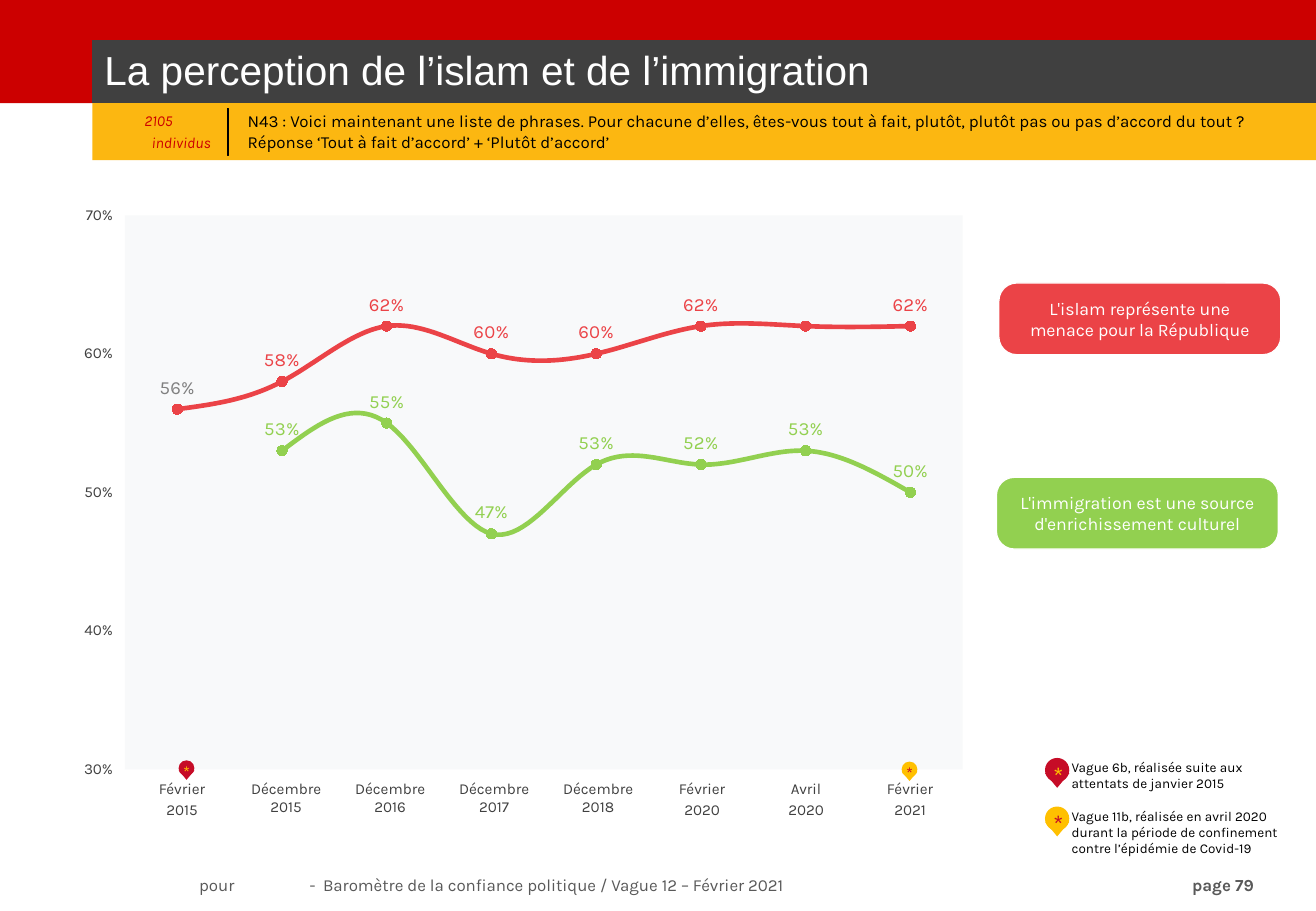
from pptx import Presentation
from pptx.chart.data import CategoryChartData
from pptx.dml.color import RGBColor
from pptx.enum.chart import XL_CHART_TYPE as ChartType, XL_LABEL_POSITION as LabelPos
from pptx.enum.chart import XL_MARKER_STYLE as Marker, XL_TICK_MARK as Tick
from pptx.enum.shapes import MSO_SHAPE as Shape
from pptx.enum.text import MSO_ANCHOR as Anchor, PP_ALIGN as Align
from pptx.oxml import parse_xml
from pptx.oxml.ns import nsdecls, qn
from pptx.util import Pt

PX = 9144  # one px is a hundredth of an inch
WIDTH, HEIGHT = 1083, 750

BRIGHT_RED = RGBColor(0xCC, 0x00, 0x00)
YELLOW = RGBColor(0xFC, 0xB7, 0x11)
DARK = RGBColor(0x40, 0x40, 0x40)
FOOTER_GREY = RGBColor(0x59, 0x59, 0x59)
LABEL_GREY = RGBColor(0x80, 0x80, 0x80)
WHITE = RGBColor(0xFF, 0xFF, 0xFF)
BLACK = RGBColor(0x00, 0x00, 0x00)
CORAL = RGBColor(0xEB, 0x43, 0x47)
GREEN = RGBColor(0x92, 0xD0, 0x50)
PIN_RED = RGBColor(0xC6, 0x0C, 0x27)
PIN_GOLD = RGBColor(0xFF, 0xC0, 0x00)
PLOT_FILL = "F8F9FA"
NO_TABLE_STYLE = "{2D5ABB26-0587-4C30-8999-92F81FD0307C}"

WAVES = ["Février\n2015", "Décembre 2015", "Décembre 2016", "Décembre 2017",
         "Décembre 2018", "Février\n2020", "Avril\n2020", "Février\n2021"]
ISLAM = "L'islam représente une menace pour la République"
IMMIGRATION = "L'immigration est une source d'enrichissement culturel"
SERIES = [
    (ISLAM, CORAL, (0.56, 0.58, 0.62, 0.6, 0.6, 0.62, 0.62, 0.62)),
    (IMMIGRATION, GREEN, (None, 0.53, 0.55, 0.47, 0.52, 0.52, 0.53, 0.5)),
]


def emu(*lengths):
    return [round(length * PX) for length in lengths]


def style(font, size, color, name="Karla"):
    font.name, font.size = name, Pt(size)
    font.color.rgb = color


def write(frame, text, size, color, align=Align.LEFT, name="Karla"):
    frame.text = text
    for number, para in enumerate(frame.paragraphs):
        para.alignment = align
        if number:
            para.space_before = Pt(size * 0.2)
        for span in para.runs:
            style(span.font, size, color, name)


def add_text(shapes, box, text, size, color, anchor=Anchor.TOP, **options):
    frame = shapes.add_textbox(*emu(*box)).text_frame
    frame.word_wrap = True
    frame.vertical_anchor = anchor
    write(frame, text, size, color, **options)
    return frame


def add_block(shapes, box, fill, kind=Shape.RECTANGLE):
    block = shapes.add_shape(kind, *emu(*box))
    block.shadow.inherit = False
    block.fill.solid()
    block.fill.fore_color.rgb = fill
    block.line.fill.background()
    return block


def add_plain_table(page, box, columns):
    table = page.shapes.add_table(1, columns, *emu(*box)).table
    table.first_row = table.horz_banding = False
    table._tbl.tblPr.find(qn("a:tableStyleId")).text = NO_TABLE_STYLE
    return table


def add_header(page, box):
    left, top, width, height = box
    add_block(page.shapes, (left, top, width, 85), BRIGHT_RED)
    inner, inner_width = left + 76, width - 76
    add_block(page.shapes, (inner, top + 85, inner_width, height - 85), YELLOW)
    rule = add_block(page.shapes, (left + 187, top + 89, 1, 39), BRIGHT_RED)
    rule.line.color.rgb = BLACK
    rule.line.width = Pt(0.25)

    # Sample size
    sample = add_text(page.shapes, (left + 109, top + 92, 77, 33),
                      "2105\nindividus", 9, BRIGHT_RED)
    sample.margin_top = sample.margin_bottom = 0
    for para in sample.paragraphs:
        para.runs[0].font.italic = True
    sample.paragraphs[1]._p.get_or_add_pPr().set("marL", str(6 * PX))

    # Title and question
    title = add_plain_table(page, (inner, top + 33, inner_width, 52), 1).cell(0, 0)
    title.fill.solid()
    title.fill.fore_color.rgb = DARK
    title.vertical_anchor = Anchor.MIDDLE
    write(title.text_frame, "La perception de l’islam et de l’immigration",
          24, WHITE, name="Arial")
    add_text(page.shapes, (left + 194, top + 85, 874, 46),
             "N43 : Voici maintenant une liste de phrases. Pour chacune d’elles, "
             "êtes-vous tout à fait, plutôt, plutôt pas ou pas d’accord du tout ? "
             "Réponse ‘Tout à fait d’accord’ + ‘Plutôt d’accord’",
             10, BLACK, Anchor.MIDDLE)


def add_trend_chart(page, box):
    data = CategoryChartData(number_format="0%")
    data.categories = [wave.replace("\n", " ") for wave in WAVES]
    for name, _, values in SERIES:
        data.add_series(name, values)
    chart = page.shapes.add_chart(ChartType.LINE_MARKERS, *emu(*box), data).chart
    chart.has_title = chart.has_legend = False
    style(chart.font, 18, BLACK, "Arial")

    # Axes
    chart.category_axis.visible = False
    axis = chart.value_axis
    axis.minimum_scale, axis.maximum_scale, axis.major_unit = 0.3, 0.7, 0.1
    axis.has_major_gridlines = False
    axis.major_tick_mark = Tick.OUTSIDE
    axis.format.line.fill.background()
    axis.tick_labels.number_format = "0%"
    axis.tick_labels.number_format_is_linked = False
    style(axis.tick_labels.font, 9, DARK)

    # Plot area place and fill
    area = chart._chartSpace.chart.plotArea
    for layout in area.findall(qn("c:layout")):
        area.remove(layout)
    places = "".join(f'<c:{key} val="{value}"/>' for key, value in (
        ("layoutTarget", "inner"), ("xMode", "edge"), ("yMode", "edge"),
        ("x", 0.065), ("y", 0.019), ("w", 0.899), ("h", 0.931)))
    area.insert(0, parse_xml(f'<c:layout {nsdecls("c")}><c:manualLayout>{places}'
                             '</c:manualLayout></c:layout>'))
    area.append(parse_xml(f'<c:spPr {nsdecls("c", "a")}><a:solidFill><a:srgbClr val="{PLOT_FILL}"/>'
                          '</a:solidFill><a:ln><a:noFill/></a:ln></c:spPr>'))

    # Curves and their labels
    plot = chart.plots[0]
    plot.vary_by_categories = False
    for series, (_, color, _) in zip(plot.series, SERIES):
        series.smooth = True
        series.format.line.color.rgb = color
        series.format.line.width = Pt(2.75)
        series.marker.style, series.marker.size = Marker.CIRCLE, 6
        series.marker.format.fill.solid()
        series.marker.format.fill.fore_color.rgb = color
        series.marker.format.line.color.rgb = color
        labels = series.data_labels
        labels.show_value = True
        labels.position = LabelPos.ABOVE
        labels.number_format, labels.number_format_is_linked = "0%", False
        style(labels.font, 11, color)

    # Labels that differ from their series
    islam, immigration = plot.series
    first = islam.points[0].data_label
    style(first.font, 11, LABEL_GREY)
    first.position = LabelPos.ABOVE
    islam.data_labels._element.insert(1, parse_xml(
        f'<c:dLbl {nsdecls("c")}><c:idx val="6"/><c:delete val="1"/></c:dLbl>'))
    rounded = immigration.points[4].data_label
    write(rounded.text_frame, "53%", 11, GREEN, Align.CENTER)
    rounded.position = LabelPos.ABOVE


def add_wave_dates(page, box):
    table = add_plain_table(page, box, len(WAVES))
    for cell, wave in zip(table.rows[0].cells, WAVES):
        cell.fill.background()
        cell.margin_left = cell.margin_right = PX
        write(cell.text_frame, wave, 9, DARK, Align.CENTER)


def add_statement(page, box, text, fill):
    block = add_block(page.shapes, box, fill, Shape.ROUNDED_RECTANGLE)
    block.adjustments[0] = 0.25
    block.line.color.rgb = WHITE
    block.line.width = Pt(0.75)
    block.text_frame.word_wrap = True
    block.text_frame.vertical_anchor = Anchor.MIDDLE
    write(block.text_frame, text, 10.5, WHITE, Align.CENTER)


def add_pin(page, left, top, size, star_size, fill, star_color):
    shapes = page.shapes.add_group_shape().shapes
    add_block(shapes, (left, top, size, size), fill, Shape.OVAL)
    tip = add_block(shapes, (left, top + size * 0.63, size, size * 0.6),
                    fill, Shape.ISOSCELES_TRIANGLE)
    tip.rotation = 180
    star = add_text(shapes, (left + size // 16, top + size * 0.2, size, size),
                    "*", star_size, star_color, Anchor.MIDDLE, align=Align.CENTER)
    star.margin_left = star.margin_right = star.margin_top = star.margin_bottom = 0
    star.word_wrap = False


def add_wave_note(page, box, text, fill, star_color):
    left, top, width, height = box
    add_text(page.shapes, (left + 12, top, width - 12, height), text, 8, BLACK)
    add_pin(page, left, top + 4, 20, 15, fill, star_color)


def add_footer(page, box):
    frame = add_text(page.shapes, box, "\tpour\t-\tBaromètre de la confiance politique"
                     " / Vague 12 – Février 2021\t", 10, FOOTER_GREY)
    para = frame.paragraphs[0]
    stops = "".join(f'<a:tab pos="{pos * PX}" algn="{side}"/>' for pos, side in (
        (73, "l"), (164, "l"), (175, "l"), (941, "r")))
    para._p.get_or_add_pPr().append(parse_xml(f'<a:tabLst {nsdecls("a")}>{stops}</a:tabLst>'))
    number = para.add_run()
    number.text = "page 79"
    style(number.font, 10, FOOTER_GREY)
    number.font.bold = True


def main():
    deck = Presentation()
    deck.slide_width, deck.slide_height = emu(WIDTH, HEIGHT)
    page = deck.slides.add_slide(deck.slide_layouts[6])
    add_footer(page, (81, 715, 1002, 27))
    add_header(page, (0, 0, WIDTH, 132))
    add_trend_chart(page, (53, 168, 767, 490))
    add_statement(page, (822, 233, 232, 59), ISLAM, CORAL)
    add_statement(page, (820, 393, 232, 59), IMMIGRATION, GREEN)
    add_wave_dates(page, (107, 638, 685, 43))
    add_pin(page, 147, 626, 13, 10, PIN_RED, PIN_GOLD)
    add_pin(page, 742, 627, 13, 10, PIN_GOLD, PIN_RED)
    add_wave_note(page, (860, 620, 185, 37),
                  "Vague 6b, réalisée suite aux attentats de janvier 2015", PIN_RED, PIN_GOLD)
    add_wave_note(page, (860, 660, 203, 50),
                  "Vague 11b, réalisée en avril 2020 durant la période de confinement "
                  "contre l’épidémie de Covid-19", PIN_GOLD, PIN_RED)
    deck.save("out.pptx")


if __name__ == "__main__":
    main()
